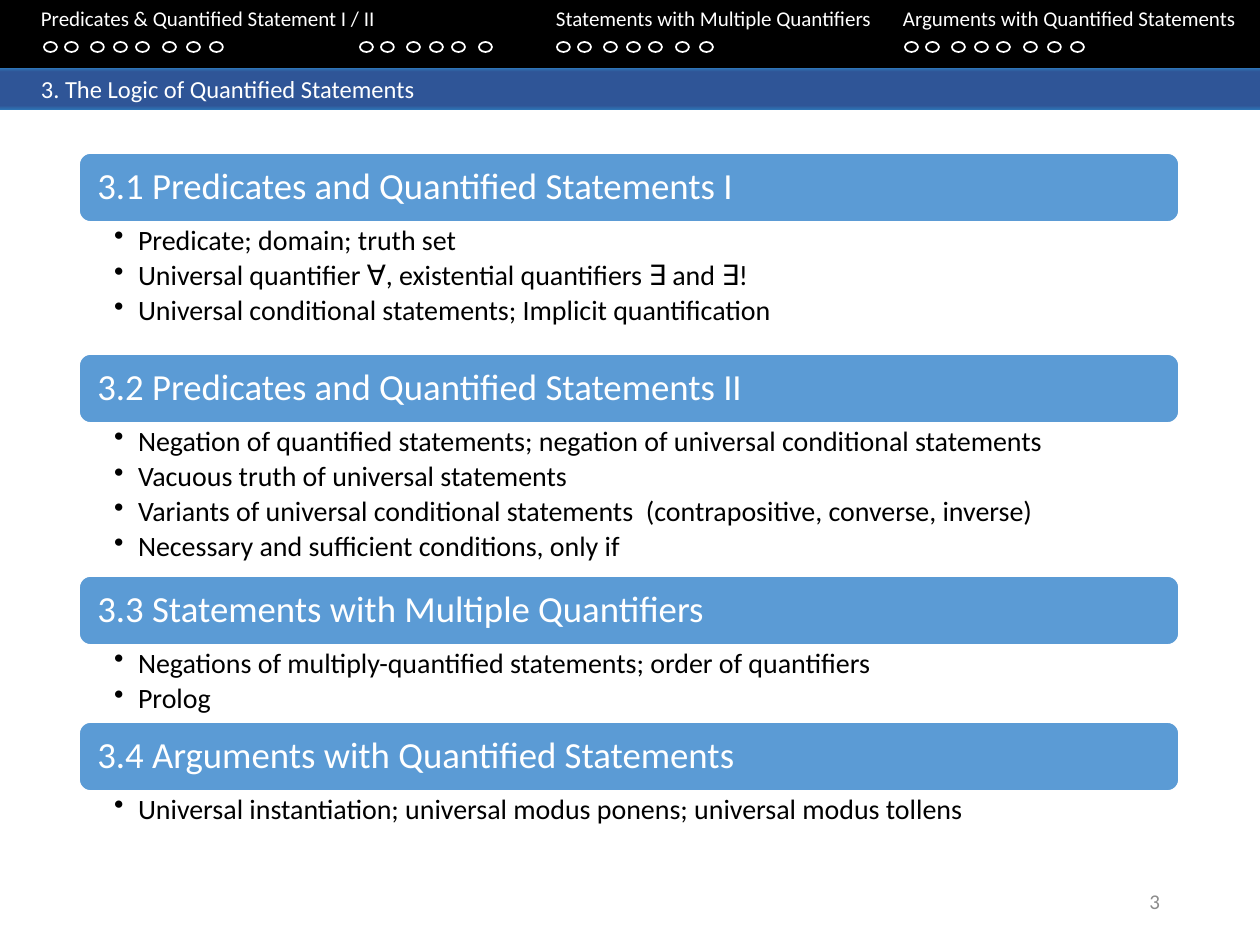
from dataclasses import dataclass

from lxml.etree import SubElement
from pptx import Presentation
from pptx.dml.color import RGBColor
from pptx.enum.shapes import MSO_SHAPE as Shape
from pptx.enum.text import MSO_ANCHOR as Anchor, PP_ALIGN as Align
from pptx.oxml.ns import qn
from pptx.slide import Slide
from pptx.util import Emu, Pt

EMU_PER_PX = 914400 / 126


def px(length):
    return Emu(round(length * EMU_PER_PX))


def color(hex_code):
    return RGBColor.from_string(hex_code)


@dataclass
class Deck:
    slide: Slide
    font: str = "Calibri"
    light: str = "FFFFFF"
    dark: str = "000000"
    accent: str = "5B9BD5"

    def shape(self, kind, box, fill=None, line=None, parent=None):
        item = (parent or self.slide).shapes.add_shape(kind, *map(px, box))
        item.shadow.inherit = False
        if fill:
            item.fill.solid()
            item.fill.fore_color.rgb = color(fill)
        else:
            item.fill.background()
        if line:
            item.line.color.rgb = color(line)
            item.line.width = Pt(1)
        else:
            item.line.fill.background()
        return item

    def gradient_bar(self, box, stops):
        bar = self.shape(Shape.RECTANGLE, box)
        bar.fill.gradient()
        bar.fill.gradient_angle = 90
        stop_list = bar._element.spPr.find(".//" + qn("a:gsLst"))
        stop_list.clear()
        for percent, shade in stops:
            stop = SubElement(stop_list, qn("a:gs"), pos=str(percent * 1000))
            SubElement(stop, qn("a:srgbClr"), val=shade)
        return bar

    def text_box(self, box, insets=(13, 6, 13, 6), anchor=Anchor.TOP):
        item = self.slide.shapes.add_textbox(*map(px, box))
        return self.frame(item, insets, anchor)

    def frame(self, item, insets=(13, 6, 13, 6), anchor=Anchor.TOP):
        frame = item.text_frame
        frame.word_wrap = True
        frame.vertical_anchor = anchor
        (frame.margin_left, frame.margin_top,
         frame.margin_right, frame.margin_bottom) = map(px, insets)
        return frame

    def run(self, paragraph, text, size, shade):
        run = paragraph.add_run()
        run.text = text
        run.font.name = self.font
        run.font.size = Pt(size)
        run.font.color.rgb = color(shade)

    def tabbed_line(self, frame, text, size, tabs):
        line = frame.paragraphs[0]
        line.alignment = Align.LEFT
        tab_list = SubElement(line._p.get_or_add_pPr(), qn("a:tabLst"))
        for tab in tabs:
            SubElement(tab_list, qn("a:tab"), pos=str(px(tab)), algn="l")
        self.run(line, "\t", 9, self.light)
        self.run(line, text, size, self.light)

    def heading(self, box, text):
        bar = self.shape(Shape.ROUNDED_RECTANGLE, box, self.accent, self.light)
        title = self.frame(bar, (15, 11, 15, 11), Anchor.MIDDLE).paragraphs[0]
        title.alignment = Align.LEFT
        title.line_spacing = 0.9
        self.run(title, text, 21, self.light)

    def bullets(self, box, topics):
        frame = self.text_box(box, (35, 4, 20, 4))
        for index, topic in enumerate(topics):
            item = frame.add_paragraph() if index else frame.paragraphs[0]
            item.line_spacing = 0.9
            item.space_after = Pt(2.9)
            props = item._p.get_or_add_pPr()
            props.set("marL", str(px(24)))
            props.set("indent", str(px(-24)))
            SubElement(props, qn("a:buChar"), char="•")
            self.run(item, topic, 16, self.dark)

    def dots(self, left, offsets):
        group = self.slide.shapes.add_group_shape()
        for offset in offsets:
            self.shape(Shape.OVAL, (left + offset, 42, 13, 10),
                       line=self.light, parent=group)


SECTIONS = [
    ("3.1 Predicates and Quantified Statements I", 132, [
        "Predicate; domain; truth set",
        "Universal quantifier ∀, existential quantifiers ∃ and ∃!",
        "Universal conditional statements; Implicit quantification"]),
    ("3.2 Predicates and Quantified Statements II", 153, [
        "Negation of quantified statements; negation of universal conditional statements",
        "Vacuous truth of universal statements",
        "Variants of universal conditional statements  (contrapositive, converse, inverse)",
        "Necessary and sufficient conditions, only if"]),
    ("3.3 Statements with Multiple Quantifiers", 77, [
        "Negations of multiply-quantified statements; order of quantifiers",
        "Prolog"]),
    ("3.4 Arguments with Quantified Statements", 48, [
        "Universal instantiation; universal modus ponens; universal modus tollens"]),
]
NAVIGATION = ["Predicates & Quantified Statement I / II",
              "Statements with Multiple Quantifiers",
              "Arguments with Quantified Statements"]
DOT_OFFSETS = [0, 21, 47, 70, 92, 119, 143, 166]
DOT_GROUPS = [(44, 8), (360, 6), (557, 7), (905, 8)]  # left edge, count


def main():
    prs = Presentation()
    prs.slide_width, prs.slide_height = px(1260), px(945)
    deck = Deck(prs.slides.add_slide(prs.slide_layouts[6]))

    # Chapter bar
    chapter = deck.gradient_bar((0, 68, 1260, 42), [
        (0, "2E75B6"), (11, "2F5597"), (91, "2F5597"), (100, "2E75B6")])
    deck.tabbed_line(deck.frame(chapter),
                     "3. The Logic of Quantified Statements", 14, [28])

    # Outline: each heading is followed by its topics
    left, width, heading_height = 79, 1100, 69
    top = 153
    for title, topics_height, topics in SECTIONS:
        deck.heading((left, top, width, heading_height), title)
        top += heading_height
        deck.bullets((left, top, width, topics_height), topics)
        top += topics_height

    # Navigation strip with progress dots
    deck.shape(Shape.RECTANGLE, (0, 0, 1260, 68), deck.dark)
    deck.tabbed_line(deck.text_box((0, 0, 1260, 63)), "\t".join(NAVIGATION),
                     12, [28, 347, 543, 890, 1187])
    for dots_left, count in DOT_GROUPS:
        deck.dots(dots_left, DOT_OFFSETS[:count])

    # Page number
    page = deck.text_box((890, 876, 283, 50), anchor=Anchor.MIDDLE).paragraphs[0]
    page.alignment = Align.RIGHT
    deck.run(page, "3", 12, "8C8C8C")

    prs.save("out.pptx")


if __name__ == "__main__":
    main()
